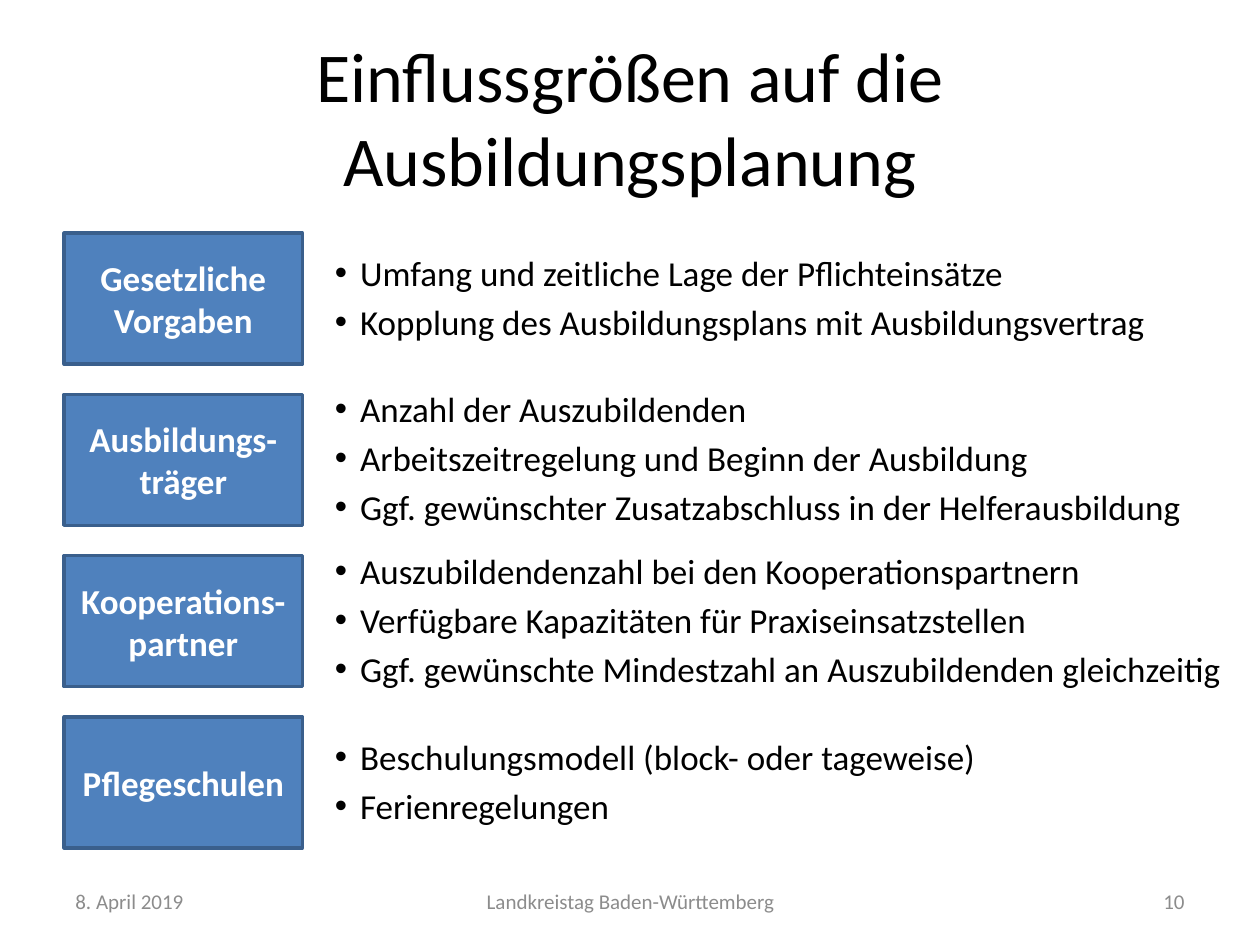
from pptx import Presentation
from pptx.dml.color import RGBColor
from pptx.enum.shapes import MSO_SHAPE
from pptx.enum.text import MSO_ANCHOR, MSO_AUTO_SIZE, PP_ALIGN
from pptx.oxml.ns import qn
from pptx.util import Inches, Pt
from lxml.etree import SubElement

COLORS = {
    "text": "000000",
    "box": "4F81BD",
    "border": "3A5F8C",
    "label": "FFFFFF",
    "footer": "8C8C8C",
}

FACTORS = [
    ("Gesetzliche\vVorgaben", 7.09, [
        "Umfang und zeitliche Lage der Pflichteinsätze",
        "Kopplung des Ausbildungsplans mit Ausbildungsvertrag",
    ]),
    ("Ausbildungs-träger", 7.09, [
        "Anzahl der Auszubildenden",
        "Arbeitszeitregelung und Beginn der Ausbildung",
        "Ggf. gewünschter Zusatzabschluss in der Helferausbildung",
    ]),
    ("Kooperations-partner", 7.24, [
        "Auszubildendenzahl bei den Kooperationspartnern",
        "Verfügbare Kapazitäten für Praxiseinsatzstellen",
        "Ggf. gewünschte Mindestzahl an Auszubildenden gleichzeitig",
    ]),
    ("Pflegeschulen", 7.09, [
        "Beschulungsmodell (block- oder tageweise)",
        "Ferienregelungen",
    ]),
]

FOOTERS = [
    ("8. April 2019", 0.5, 2.33, PP_ALIGN.LEFT),
    ("Landkreistag Baden-Württemberg", 3.42, 3.17, PP_ALIGN.CENTER),
    ("10", 7.17, 2.33, PP_ALIGN.RIGHT),
]

ROW_TOP, ROW_PITCH, BOX_HEIGHT = 1.85, 1.28, 1.04


class SlideBuilder:
    font = "Calibri"

    def __init__(self, page):
        self.page = page

    def color(self, name):
        return RGBColor.from_string(COLORS[name])

    def format_text(self, frame, size, color, align, bold=False):
        frame.word_wrap = True
        for para in frame.paragraphs:
            para.alignment = align
            for span in para.runs:
                span.font.name = self.font
                span.font.size = Pt(size)
                span.font.bold = bold
                span.font.color.rgb = self.color(color)

    def text(self, words, left, top, width, height, size, color, align):
        box = self.page.shapes.add_textbox(
            Inches(left), Inches(top), Inches(width), Inches(height))
        frame = box.text_frame
        frame.text = words
        frame.vertical_anchor = MSO_ANCHOR.MIDDLE
        self.format_text(frame, size, color, align)

    def label(self, group, words, top):
        box = group.shapes.add_shape(
            MSO_SHAPE.RECTANGLE, Inches(0.51), Inches(top),
            Inches(1.89), Inches(BOX_HEIGHT))
        box.shadow.inherit = False
        box.fill.solid()
        box.fill.fore_color.rgb = self.color("box")
        box.line.color.rgb = self.color("border")
        box.line.width = Pt(2)
        box.text_frame.text = words
        box.text_frame.vertical_anchor = MSO_ANCHOR.MIDDLE
        self.format_text(box.text_frame, 20, "label", PP_ALIGN.CENTER, True)

    def bullets(self, group, items, middle, width):
        height = 0.04 + 0.4 * len(items)
        box = group.shapes.add_textbox(
            Inches(2.56), Inches(middle - height / 2),
            Inches(width), Inches(height))
        frame = box.text_frame
        frame.text = "\n".join(items)
        frame.auto_size = MSO_AUTO_SIZE.SHAPE_TO_FIT_TEXT
        self.format_text(frame, 20, "text", PP_ALIGN.LEFT)
        for para in frame.paragraphs:
            para.space_before = Pt(4)
            properties = para._p.get_or_add_pPr()
            properties.set("marL", str(Inches(0.2)))
            properties.set("indent", str(-Inches(0.2)))
            SubElement(properties, qn("a:buFont"), typeface="Arial")
            SubElement(properties, qn("a:buChar"), char="•")

    def factor(self, words, items, top, width):
        group = self.page.shapes.add_group_shape()
        self.label(group, words, top)
        self.bullets(group, items, top + BOX_HEIGHT / 2, width)


def main():
    deck = Presentation()
    deck.slide_width = Inches(10)
    deck.slide_height = Inches(7.5)
    builder = SlideBuilder(deck.slides.add_slide(deck.slide_layouts[6]))

    builder.text("Einflussgrößen auf die Ausbildungsplanung",
                 0.5, 0.3, 9, 1.25, 40, "text", PP_ALIGN.CENTER)
    for row, (words, width, items) in enumerate(FACTORS):
        builder.factor(words, items, ROW_TOP + row * ROW_PITCH, width)
    for words, left, width, align in FOOTERS:
        builder.text(words, left, 6.95, width, 0.4, 12, "footer", align)

    deck.save("out.pptx")


if __name__ == "__main__":
    main()
